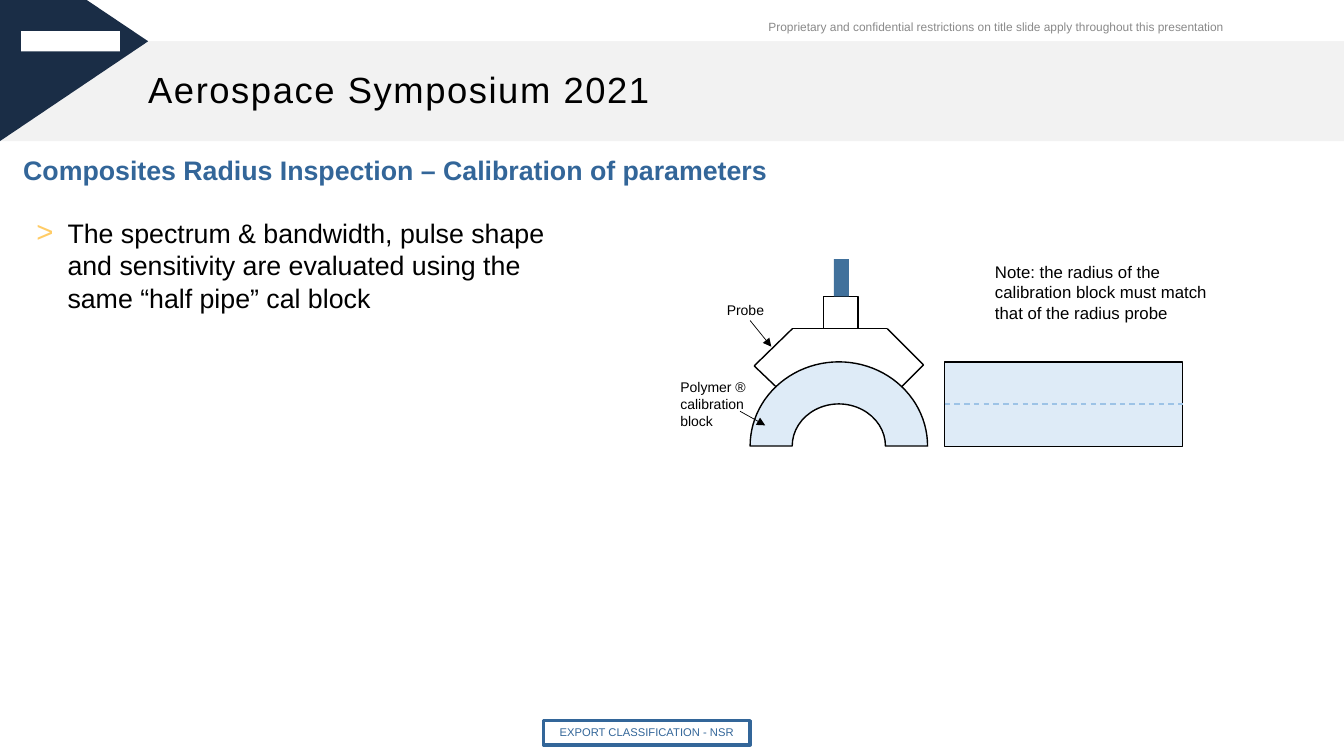
from lxml import etree
from pptx import Presentation, util as u
from pptx.dml.color import RGBColor
from pptx.enum import dml, shapes, text
from pptx.oxml import ns

COLOURS = {
    "band": "F2F2F2", "navy": "1A2D46", "white": "FFFFFF", "black": "000000",
    "grey": "898989", "blue": "336699", "gold": "FFCC66", "cable": "41719C",
    "block": "DEEBF7", "centre": "9DC3E6",
}


def rgb(name):
    return RGBColor.from_string(COLOURS[name])


def child(parent, tag, **attributes):
    return etree.SubElement(parent, ns.qn(tag), attributes)


def paint(shape, fill, line=None, width=1):
    shape.shadow.inherit = False
    shape.fill.solid()
    shape.fill.fore_color.rgb = rgb(fill)
    if line:
        shape.line.color.rgb = rgb(line)
        shape.line.width = u.Pt(width)
    else:
        shape.line.fill.background()


def add_block(page, box, fill, line=None, width=1, kind=shapes.MSO_SHAPE.RECTANGLE):
    shape = page.shapes.add_shape(kind, *map(u.Inches, box))
    paint(shape, fill, line, width)
    return shape


def add_line(page, start, end, colour="black", width=1, arrow=False):
    line = page.shapes.add_connector(
        shapes.MSO_CONNECTOR.STRAIGHT, *map(u.Inches, start + end))
    line.line.color.rgb = rgb(colour)
    line.line.width = u.Pt(width)
    if arrow:
        child(line.line._get_or_add_ln(), "a:tailEnd", type="triangle")
    child(line._element.spPr, "a:effectLst")
    return line


def write(shape, lines, size, colour="black", bold=False, insets=None, frame=None, para=None):
    frame_format = {"word_wrap": True, "vertical_anchor": text.MSO_ANCHOR.TOP}
    if insets:
        sides = ("margin_left", "margin_top", "margin_right", "margin_bottom")
        frame_format.update(zip(sides, map(u.Inches, insets)))
    frame_format.update(frame or {})
    for name, value in frame_format.items():
        setattr(shape.text_frame, name, value)
    para_format = {"alignment": text.PP_ALIGN.LEFT, **(para or {})}
    font_format = {"name": "Arial", "size": u.Pt(size), "bold": bold}
    for index, words in enumerate(lines):
        paras = shape.text_frame.paragraphs
        paragraph = shape.text_frame.add_paragraph() if index else paras[0]
        for name, value in para_format.items():
            setattr(paragraph, name, value)
        span = paragraph.add_run()
        span.text = words
        for name, value in font_format.items():
            setattr(span.font, name, value)
        span.font.color.rgb = rgb(colour)
    return shape.text_frame.paragraphs[0]


def add_text(page, box, lines, size, **options):
    return write(page.shapes.add_textbox(*map(u.Inches, box)), lines, size, **options)


def add_header(page, box):
    left, top, width, height = box
    add_block(page, (left, top + 0.41, width, height - 0.41), "band")
    corner = [(0, 140), (147, 41), (86, 0), (0, 0)]
    points = [(left * 100 + x, top * 100 + y) for x, y in corner]
    builder = page.shapes.build_freeform(*points[0], scale=u.Inches(0.01))
    builder.add_line_segments(points[1:], close=True)
    paint(builder.convert_to_shape(), "navy")
    add_block(page, (left + 0.21, top + 0.31, 0.98, 0.2), "white")
    add_text(page, (left + 6.06, top + 0.19, 6.08, 0.21),
             ["Proprietary and confidential restrictions on title slide apply "
              "throughout this presentation"], 8.5, colour="grey", insets=(0, 0, 0, 0),
             para={"alignment": text.PP_ALIGN.RIGHT, "line_spacing": 1.02})
    title = add_block(page, (left + 1.47, top + 0.41, width - 1.47, 0.98), "band")
    paragraph = write(title, ["Aerospace Symposium 2021"], 26, insets=(0, 0, 0, 0.04),
                      frame={"vertical_anchor": text.MSO_ANCHOR.MIDDLE})
    paragraph.runs[0].font._element.set("spc", "110")


def add_body(page, box):
    left, top, width, height = box
    spacing = {"line_spacing": 1.02, "space_before": u.Pt(5.3), "space_after": u.Pt(5.3)}
    add_text(page, (left, top, width, 0.33),
             ["Composites Radius Inspection – Calibration of parameters"], 19.1,
             colour="blue", bold=True, insets=(0, 0, 0, 0), para=spacing)
    point = add_text(page, (left + 0.13, top + 0.62, 5.31, height - 0.62),
                     ["The spectrum & bandwidth, pulse shape and sensitivity are evaluated "
                      "using the same “half pipe” cal block"], 19.1,
                     insets=(0, 0, 0, 0), para=spacing)
    properties = point._element.get_or_add_pPr()
    indent = u.Inches(0.31)
    properties.set("marL", str(indent))
    properties.set("indent", str(-indent))
    child(child(properties, "a:buClr"), "a:srgbClr", val=COLOURS["gold"])
    child(properties, "a:buSzPct", val="110000")
    child(properties, "a:buFont", typeface="Arial")
    child(properties, "a:buChar", char=">")


def add_diagram(page, box):
    left, top, width, height = box

    def at(x, y, *size):
        return (left + x, top + y) + size

    add_block(page, at(0.79, 1.04, 1.76, 1.67), "block", "black",
              kind=shapes.MSO_SHAPE.BLOCK_ARC)
    outline = [(1.05, 1.29), (0.83, 1.08), (1.21, 0.71), (2.15, 0.71), (2.51, 1.07), (2.29, 1.29)]
    for start, end in zip(outline, outline[1:]):
        add_line(page, at(*start), at(*end))
    add_block(page, at(1.52, 0.39, 0.34, 0.32), "white", "black")
    add_block(page, at(1.62, 0.02, 0.15, 0.37), "cable")

    side_view = add_block(page, at(2.72, 1.04, 2.36, 0.84), "block", "black")
    centre = add_line(page, at(2.72, 1.46), at(5.08, 1.46), "centre")
    centre.line.dash_style = dml.MSO_LINE.DASH
    centre.begin_connect(side_view, 1)
    centre.end_connect(side_view, 3)

    labels = [
        (at(3.12, 0, 2.46, 0.73), 12,
         ["Note: the radius of the calibration block must match that of the radius probe"]),
        (at(0.46, 0.39, 0.69, 0.28), 10, ["Probe"]),
        (at(0, 1.16, 0.94, 0.51), 10, ["Polymer ®", "calibration", "block"]),
    ]
    for label_box, size, lines in labels:
        add_text(page, label_box, lines, size)
    for start, end in [((0.79, 0.63), (1, 0.89)), ((0.69, 1.53), (0.94, 1.67))]:
        add_line(page, at(*start), at(*end), width=0.5, arrow=True)


def add_footer(page, box):
    label = add_block(page, box, "white", "blue", 2.5)
    write(label, ["EXPORT CLASSIFICATION - NSR"], 8, colour="blue",
          para={"alignment": text.PP_ALIGN.CENTER})


def main():
    deck = Presentation()
    deck.slide_width, deck.slide_height = u.Inches(13.33), u.Inches(7.5)
    page = deck.slides.add_slide(deck.slide_layouts[6])
    add_header(page, (0, 0, 13.33, 1.4))
    add_body(page, (0.23, 1.52, 8.65, 1.58))
    add_diagram(page, (6.65, 2.55, 5.58, 2.71))
    add_footer(page, (5.39, 7.15, 2.05, 0.24))
    deck.save("out.pptx")


if __name__ == "__main__":
    main()
